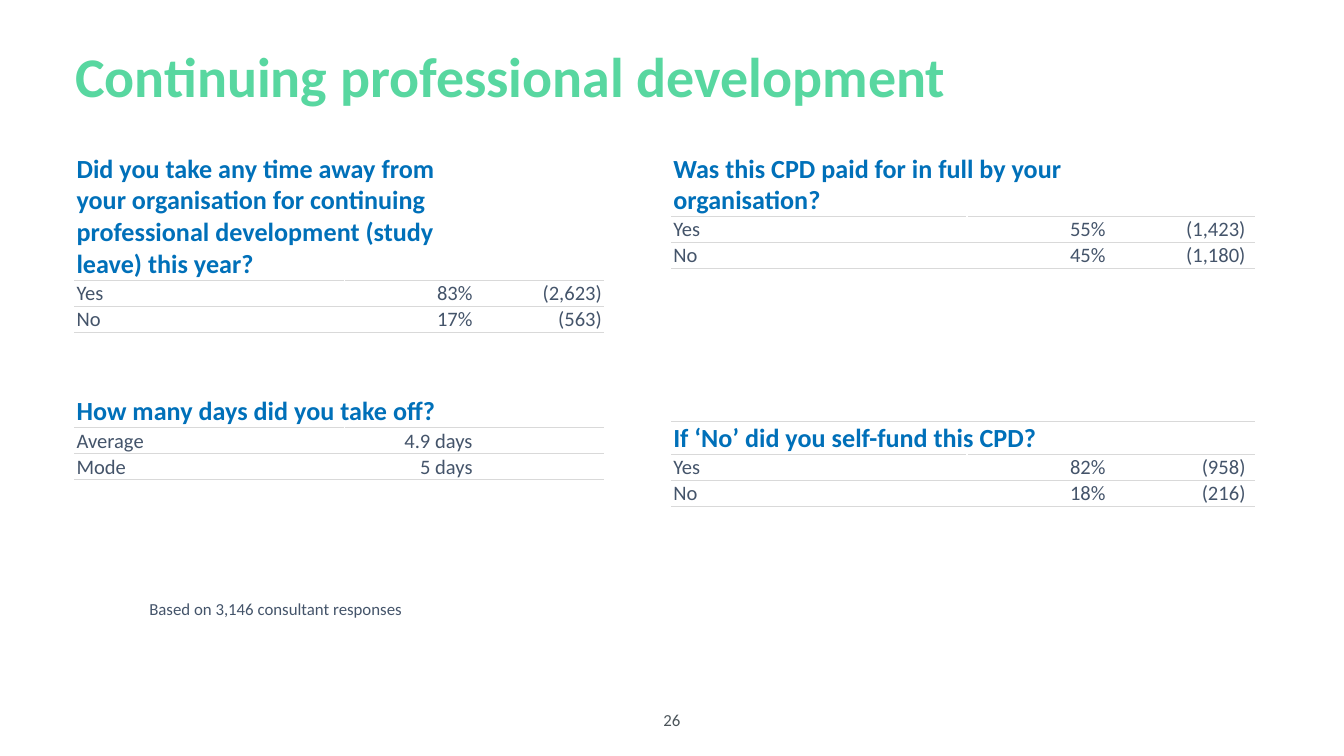
from lxml.etree import SubElement
from pptx import Presentation
from pptx.dml.color import RGBColor
from pptx.enum.text import MSO_ANCHOR as Anchor, PP_ALIGN as Align
from pptx.oxml.ns import qn
from pptx.util import Pt

FONT = "Calibri"
GREEN, BLUE, SLATE, GREY = "58D7A0", "0070B9", "44546A", "4C555B"
RULE, WHITE = "D9D9D9", "FFFFFF"
ROW_HEIGHT = 13.9
TABLE_TOP = 81.4

# Each row: height, then cell texts; a single text is a question over two columns.
LEFT_ROWS = [
    (68.6, ["Did you take any time away from your organisation for continuing "
            "professional development (study leave) this year?"]),
    (ROW_HEIGHT, ["Yes", "83%", "(2,623)"]),
    (ROW_HEIGHT, ["No", "17%", "(563)"]),
    (51.4, ["How many days did you take off?"]),
    (ROW_HEIGHT, ["Average", "4.9 days"]),
    (ROW_HEIGHT, ["Mode", "5 days"]),
]
RIGHT_ROWS = [
    (34.3, ["Was this CPD paid for in full by your organisation?"]),
    (ROW_HEIGHT, ["Yes", "55%", "(1,423)"]),
    (ROW_HEIGHT, ["No", "45%", "(1,180)"]),
    (82, []),
    (17.7, ["If ‘No’ did you self-fund this CPD?"]),
    (ROW_HEIGHT, ["Yes", "82%", "(958)"]),
    (ROW_HEIGHT, ["No", "18%", "(216)"]),
]


def color(hex_string):
    return RGBColor.from_string(hex_string)


def style_paragraph(paragraph, size, hex_color, bold=False, align=Align.LEFT):
    paragraph.alignment = align
    font = paragraph.font
    font.name, font.size, font.bold = FONT, Pt(size), bold
    font.color.rgb = color(hex_color)


def add_text(slide, box, text, size, hex_color, bold=False, align=Align.LEFT,
             anchor=Anchor.TOP, line_spacing=1.0):
    shape = slide.shapes.add_textbox(*(Pt(length) for length in box))
    frame = shape.text_frame
    frame.word_wrap = True
    frame.vertical_anchor = anchor
    frame.margin_left = frame.margin_right = 0
    frame.margin_top = frame.margin_bottom = 0
    paragraph = frame.paragraphs[0]
    paragraph.text = text
    paragraph.line_spacing = line_spacing
    style_paragraph(paragraph, size, hex_color, bold, align)


def set_borders(cell, top_color):
    """White sides and thin grey rules; the top rule takes its own colour."""
    properties = cell._tc.get_or_add_tcPr()
    for side, hex_color in zip("LRTB", (WHITE, WHITE, top_color, RULE)):
        width = 1 if hex_color == WHITE else 0.5
        line = SubElement(properties, qn(f"a:ln{side}"), w=str(Pt(width)))
        fill = SubElement(line, qn("a:solidFill"))
        SubElement(fill, qn("a:srgbClr"), val=hex_color)


def fill_cell(cell, text, is_question, is_label):
    cell.margin_left = cell.margin_right = cell.margin_top = Pt(0.7)
    cell.margin_bottom = 0
    cell.vertical_anchor = Anchor.BOTTOM
    paragraph = cell.text_frame.paragraphs[0]
    if not text:
        # A small end mark keeps an empty cell from stretching its row.
        paragraph._p.get_or_add_endParaRPr().set("sz", "900")
        return
    paragraph.text = text
    if is_question:
        style_paragraph(paragraph, 14, BLUE, bold=True)
    else:
        style_paragraph(paragraph, 11, SLATE,
                        align=Align.LEFT if is_label else Align.RIGHT)


def add_answer_table(slide, left, column_widths, rows):
    height = sum(row_height for row_height, _ in rows)
    table = slide.shapes.add_table(
        len(rows), len(column_widths), Pt(left), Pt(TABLE_TOP),
        Pt(sum(column_widths)), Pt(height)).table
    table.first_row = table.horz_banding = False
    for column, width in zip(table.columns, column_widths):
        column.width = Pt(width)
    for i, (row_height, texts) in enumerate(rows):
        table.rows[i].height = Pt(row_height)
        is_question = len(texts) == 1
        for j in range(len(column_widths)):
            cell = table.cell(i, j)
            set_borders(cell, RULE if i else WHITE)
            cell.fill.background()
            text = texts[j] if j < len(texts) else ""
            fill_cell(cell, text, is_question, is_label=j == 0)
        if is_question:
            table.cell(i, 0).merge(table.cell(i, 1))


def main():
    presentation = Presentation()
    presentation.slide_width, presentation.slide_height = Pt(720), Pt(405)
    slide = presentation.slides.add_slide(presentation.slide_layouts[6])

    add_text(slide, (40.3, 31, 587.5, 28), "Continuing professional development",
             30, GREEN, bold=True, anchor=Anchor.BOTTOM, line_spacing=0.9)
    add_text(slide, (0, 375, 720, 21.6), "26", 9, GREY,
             align=Align.CENTER, anchor=Anchor.MIDDLE)
    add_answer_table(slide, 40.3, (144.3, 69.3, 69.3), LEFT_ROWS)
    add_answer_table(slide, 360, (158, 75, 75, 3.6), RIGHT_ROWS)
    add_text(slide, (80, 321, 205, 19.4), "Based on 3,146 consultant responses",
             9, SLATE)

    presentation.save("out.pptx")


if __name__ == "__main__":
    main()
